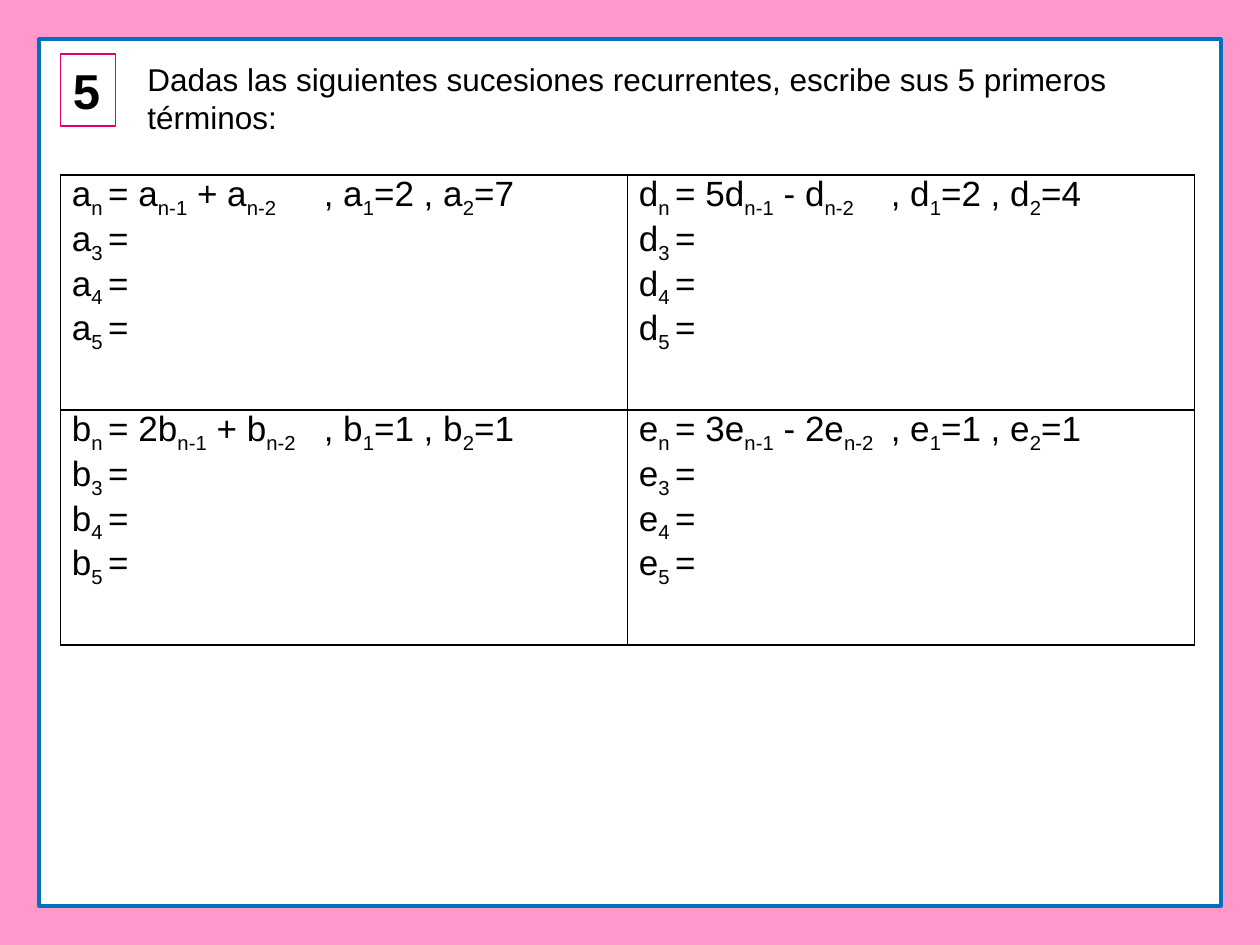
import lxml.etree
import pptx
import pptx.dml.color
import pptx.enum.shapes
import pptx.enum.text
import pptx.oxml.ns
import pptx.util

COLORS = {"background": "FF99CC", "panel": "FFFFFF", "frame": "0071BD",
          "badge": "E40067", "ink": "000000"}
FONT = "Arial"
WIDTH, HEIGHT = pptx.util.Inches(10), pptx.util.Inches(7.5)
MARGIN = pptx.util.Inches(0.31)
LEFT, TOP = pptx.util.Inches(0.48), pptx.util.Inches(0.43)
QUESTION = "Dadas las siguientes sucesiones recurrentes, escribe sus 5 primeros términos:"
# letter, first coefficient, operator and second coefficient, first two terms, tab in inches
SEQUENCES = [
    [("a", "", "+ ", 2, 7, 1.86), ("d", "5", "- ", 2, 4, 1.95)],
    [("b", "2", "+ ", 1, 1, 2.01), ("e", "3", "- 2", 1, 1, 2.11)],
]


def rgb(name):
    """Return the named colour."""
    return pptx.dml.color.RGBColor.from_string(COLORS[name])


def style_font(font, size, bold=False):
    """Apply the slide's typeface and ink."""
    font.name, font.size, font.bold = FONT, pptx.util.Pt(size), bold
    font.color.rgb = rgb("ink")


def style_text(frame, text, size, bold=False):
    """Fill a text frame with one left-aligned paragraph."""
    frame.text = text
    frame.word_wrap = True
    frame.auto_size = pptx.enum.text.MSO_AUTO_SIZE.NONE
    frame.vertical_anchor = pptx.enum.text.MSO_ANCHOR.TOP
    paragraph = frame.paragraphs[0]
    paragraph.alignment = pptx.enum.text.PP_ALIGN.LEFT
    style_font(paragraph.runs[0].font, size, bold)


def add_box(slide, box, line, weight):
    """Add an unfilled, outlined rectangle."""
    shape = slide.shapes.add_shape(pptx.enum.shapes.MSO_SHAPE.RECTANGLE, *box)
    shape.shadow.inherit = False
    shape.fill.background()
    shape.line.color.rgb = rgb(line)
    shape.line.width = pptx.util.Pt(weight)
    return shape


def add_panel(slide, box):
    """Put the framed white panel behind the title."""
    panel = add_box(slide, box, "frame", 2)
    panel.fill.solid()
    panel.fill.fore_color.rgb = rgb("panel")
    slide.shapes.title.element.addprevious(panel.element)


def add_heading(slide, box):
    """Place the exercise number and its question in the box."""
    left, top, width, height = box
    badge = add_box(slide, (left, top, pptx.util.Inches(0.44), pptx.util.Inches(0.57)),
                    "badge", 0.75)
    style_text(badge.text_frame, "5", 28, True)
    question = slide.shapes.title
    indent = pptx.util.Inches(0.59)
    question.left, question.top = left + indent, top
    question.width, question.height = width - indent, height
    style_text(question.text_frame, QUESTION, 18)


def add_formula(paragraph, parts, tab=None):
    """Write parts that alternate between the baseline and subscript."""
    properties = paragraph._p.get_or_add_pPr()
    properties.set("marL", str(pptx.util.Inches(0.02)))
    properties.set("indent", "0")
    if tab:
        tabs = lxml.etree.SubElement(properties, pptx.oxml.ns.qn("a:tabLst"))
        lxml.etree.SubElement(tabs, pptx.oxml.ns.qn("a:tab"),
                              pos=str(pptx.util.Inches(tab)), algn="l")
    for index, part in enumerate(parts):
        run = paragraph.add_run()
        run.text = part
        style_font(run.font, 20)
        if index % 2:
            run.font._element.set("baseline", "-25000")


def style_cell(cell):
    """Give a cell its insets, black borders and white fill."""
    cell.margin_left = cell.margin_right = pptx.util.Inches(0.07)
    cell.margin_top = cell.margin_bottom = 0
    properties = cell._tc.get_or_add_tcPr()
    for side in ("lnL", "lnR", "lnT", "lnB"):
        border = lxml.etree.SubElement(properties, pptx.oxml.ns.qn(f"a:{side}"),
                                       w=str(pptx.util.Pt(1)))
        fill = lxml.etree.SubElement(border, pptx.oxml.ns.qn("a:solidFill"))
        lxml.etree.SubElement(fill, pptx.oxml.ns.qn("a:srgbClr"), val=COLORS["ink"])
    cell.fill.solid()
    cell.fill.fore_color.rgb = rgb("panel")


def fill_sequence(cell, letter, factor, operation, first, second, tab):
    """Write a recurrence and the terms to be found."""
    frame = cell.text_frame
    recurrence = [letter, "n ", f"= {factor}{letter}", "n-1", f" {operation}{letter}", "n-2",
                  f"\t, {letter}", "1", f"={first} , {letter}", "2", f"={second}"]
    add_formula(frame.paragraphs[0], recurrence, tab)
    for term in (3, 4, 5):
        add_formula(frame.add_paragraph(), [letter, f"{term} ", "="])


def add_sequences(slide, box):
    """Place the grid of recurrent sequences in the box."""
    table = slide.shapes.add_table(len(SEQUENCES), len(SEQUENCES[0]), *box).table
    table.first_row = table.horz_banding = False
    for row, sequences in enumerate(SEQUENCES):
        for column, sequence in enumerate(sequences):
            cell = table.cell(row, column)
            style_cell(cell)
            fill_sequence(cell, *sequence)


def main():
    """Build and save the exercise slide."""
    deck = pptx.Presentation()
    deck.slide_width, deck.slide_height = WIDTH, HEIGHT
    slide = deck.slides.add_slide(deck.slide_layouts[5])
    slide.background.fill.solid()
    slide.background.fill.fore_color.rgb = rgb("background")
    add_panel(slide, (MARGIN, MARGIN, WIDTH - 2 * MARGIN, HEIGHT - 2 * MARGIN))
    add_heading(slide, (LEFT, TOP, pptx.util.Inches(8.7), pptx.util.Inches(0.71)))
    add_sequences(slide, (LEFT, pptx.util.Inches(1.39),
                          pptx.util.Inches(9), pptx.util.Inches(3.73)))
    deck.save("out.pptx")


if __name__ == "__main__":
    main()
